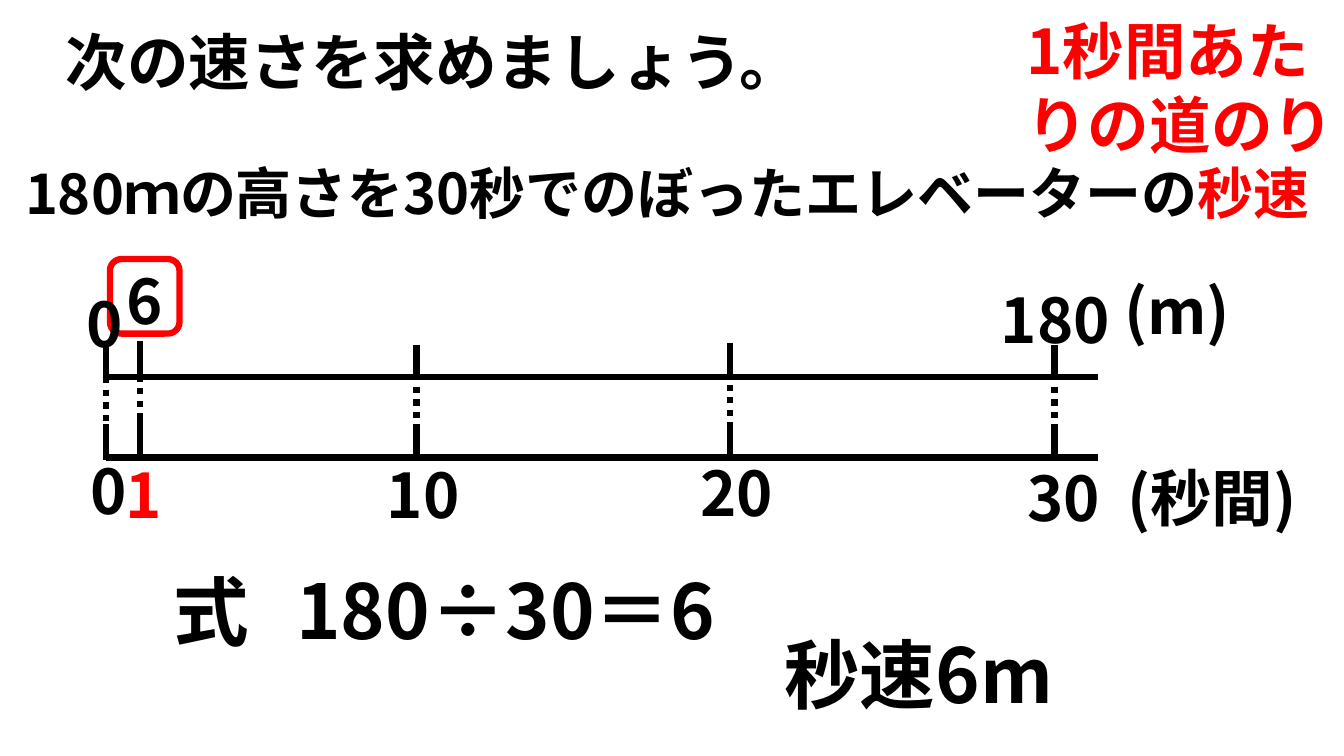
from lxml.etree import SubElement
from pptx import Presentation
from pptx.dml.color import RGBColor
from pptx.enum.dml import MSO_LINE_DASH_STYLE as Dash
from pptx.enum.shapes import MSO_CONNECTOR as Connector, MSO_SHAPE as Shape
from pptx.enum.text import MSO_ANCHOR as Anchor, MSO_AUTO_SIZE as AutoSize, PP_ALIGN as Align
from pptx.oxml.ns import qn
from pptx.util import Inches, Pt


def color(value):
    return RGBColor.from_string(value)


class NumberLineSlide:
    FONT = "Noto Sans CJK JP"
    BLACK = "000000"
    RED = "FF0000"
    STROKE = Pt(4.5)

    def __init__(self, presentation):
        self.slide = presentation.slides.add_slide(presentation.slide_layouts[5])
        self.shapes = self.slide.shapes

    def fill_text(self, frame, runs, size):
        frame.word_wrap = True
        frame.auto_size = AutoSize.NONE
        frame.vertical_anchor = Anchor.TOP
        paragraph = frame.paragraphs[0]
        paragraph.alignment = Align.LEFT
        for words, ink in runs:
            run = paragraph.add_run()
            run.text = words
            run.font.name = self.FONT
            run.font.size = Pt(size)
            run.font.bold = True
            run.font.color.rgb = color(ink)
            SubElement(run.font._element, qn("a:ea"), typeface=self.FONT)

    def title(self, words, left, top, width, height, size=44):
        heading = self.shapes.title
        heading.left, heading.top = Inches(left), Inches(top)
        heading.width, heading.height = Inches(width), Inches(height)
        self.fill_text(heading.text_frame, [(words, self.BLACK)], size)

    def text(self, runs, left, top, width, height=0.84, size=44):
        box = self.shapes.add_textbox(Inches(left), Inches(top), Inches(width), Inches(height))
        self.fill_text(box.text_frame, runs, size)

    def line(self, x1, y1, x2, y2, dotted=False):
        stroke = self.shapes.add_connector(
            Connector.STRAIGHT, Inches(x1), Inches(y1), Inches(x2), Inches(y2))
        stroke.line.color.rgb = color(self.BLACK)
        stroke.line.width = self.STROKE
        if dotted:
            stroke.line.dash_style = Dash.ROUND_DOT
        SubElement(stroke._element.spPr, qn("a:effectLst"))

    def tick(self, x, top, dots_top):
        for start in (top, top + 0.79):
            self.line(x, start, x, start + 0.35)
        self.line(x, dots_top, x, dots_top + 0.58, dotted=True)

    def frame(self, left, top, width, height):
        outline = self.shapes.add_shape(
            Shape.ROUNDED_RECTANGLE, Inches(left), Inches(top), Inches(width), Inches(height))
        outline.shadow.inherit = False
        outline.fill.background()
        outline.line.color.rgb = color(self.RED)
        outline.line.width = self.STROKE


def main():
    presentation = Presentation()
    presentation.slide_width = Inches(13.33)
    presentation.slide_height = Inches(7.5)
    page = NumberLineSlide(presentation)
    black, red = page.BLACK, page.RED

    page.title("次の速さを求めましょう。", 0.55, 0.19, 7.62, 0.84)
    page.text([("180ｍの高さを30秒でのぼったエレベーターの", black), ("秒速", red)],
              0.15, 1.52, 13.04, 0.77, 40)
    page.text([("1秒間あたりの道のり", red)], 10.08, 0.08, 3.39, 1.58)

    for axis_y in (3.74, 4.54):
        page.line(1.05, axis_y, 10.89, axis_y)
    for x, top, dots_top in [(1.05, 3.42, 3.74), (1.39, 3.38, 3.6), (4.13, 3.42, 3.71),
                             (7.24, 3.4, 3.69), (10.46, 3.42, 3.71)]:
        page.tick(x, top, dots_top)

    page.frame(1.09, 2.57, 0.69, 0.74)
    for label, ink, left, top, width in [
        ("0", black, 0.76, 2.79, 0.66),
        ("6", black, 1.16, 2.56, 0.66),
        ("180", black, 9.83, 2.75, 1.94),
        ("(m)", black, 11.05, 2.66, 1.83),
        ("0", black, 0.8, 4.44, 0.66),
        ("1", red, 1.15, 4.48, 0.55),
        ("10", black, 3.74, 4.48, 0.96),
        ("20", black, 6.85, 4.46, 0.96),
        ("30", black, 10.09, 4.51, 0.96),
        ("(秒間)", black, 11.08, 4.51, 2.1),
    ]:
        page.text([(label, ink)], left, top, width)

    for step, left, top, width in [
        ("式", 1.62, 5.55, 0.99),
        ("180÷30＝6", 2.84, 5.54, 6.96),
        ("秒速6m", 7.68, 6.18, 4.73),
    ]:
        page.text([(step, black)], left, top, width, 1.01, 54)

    presentation.save("out.pptx")


if __name__ == "__main__":
    main()
